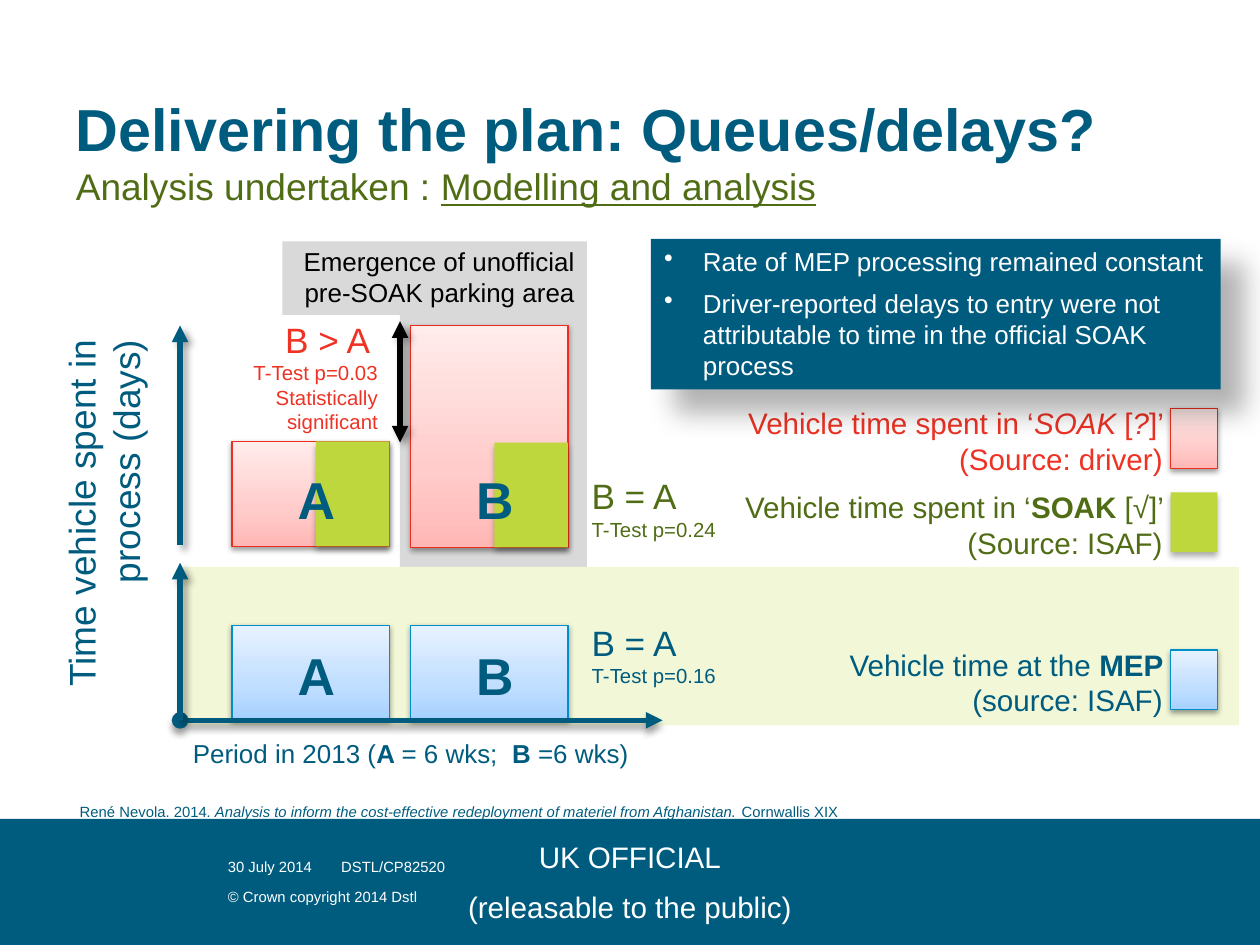
from copy import deepcopy

from lxml.etree import SubElement
from pptx import Presentation
from pptx.dml.color import RGBColor
from pptx.enum.shapes import MSO_CONNECTOR, MSO_SHAPE
from pptx.enum.text import MSO_ANCHOR, MSO_AUTO_SIZE, PP_ALIGN
from pptx.oxml.ns import qn
from pptx.util import Cm, Pt

TEAL = RGBColor(0x00, 0x5C, 0x7E)
RED = RGBColor(0xEE, 0x32, 0x24)
RED_EDGE = RGBColor(0xEE, 0x2D, 0x1E)
BLUE_EDGE = RGBColor(0x00, 0x8F, 0xCA)
OLIVE = RGBColor(0x50, 0x6D, 0x15)
LIME = RGBColor(0xBD, 0xD7, 0x3D)
PALE = RGBColor(0xF2, 0xF7, 0xD8)
GREY = RGBColor(0xD9, 0xD9, 0xD9)
BLACK = RGBColor(0, 0, 0)
WHITE = RGBColor(0xFF, 0xFF, 0xFF)
PINKS = [RGBColor.from_string(c) for c in ("FFB7B5", "FFCCCB", "FFECEB")]
BLUES = [RGBColor.from_string(c) for c in ("A6D1FF", "C0DEFF", "E7F2FF")]

# Shadows: opacity %, blur pt, distance pt, direction in degrees
BAR_SHADOW = (38, 3.1, 1.6, 90)
LIME_SHADOW = (32, 3.5, 2.2, 90)
BOX_SHADOW = (30, 15, 18, 45)
# Box styles: fill, edge, shadow
DRIVER = (PINKS, RED_EDGE, BAR_SHADOW)
SOAK = (LIME, None, LIME_SHADOW)
MEP = (BLUES, BLUE_EDGE, BAR_SHADOW)

LEFT, CENTER, RIGHT = PP_ALIGN.LEFT, PP_ALIGN.CENTER, PP_ALIGN.RIGHT


class Board:
    font = "Arial"

    def __init__(self, prs):
        self.s = prs.slides.add_slide(prs.slide_layouts[5])

    def effects(self, sp, shadow):
        lst = SubElement(sp._element.spPr, qn("a:effectLst"))
        if shadow:
            alpha, blur, dist, angle = shadow
            outer = SubElement(lst, qn("a:outerShdw"), blurRad=str(Pt(blur)),
                               dist=str(Pt(dist)), dir=str(angle * 60000),
                               algn="tl", rotWithShape="0")
            clr = SubElement(outer, qn("a:srgbClr"), val="000000")
            SubElement(clr, qn("a:alpha"), val=str(alpha * 1000))

    def gradient(self, fill, sp, colors):
        fill.gradient()
        fill.gradient_angle = 90
        first = sp._element.spPr.find(".//" + qn("a:gs"))
        first.addnext(deepcopy(first))
        for stop, color, pos in zip(fill.gradient_stops, colors, (0, 0.35, 1)):
            stop.color.rgb, stop.position = color, pos

    def box(self, x, y, w, h, fill, edge=None, shadow=None):
        sp = self.s.shapes.add_shape(MSO_SHAPE.RECTANGLE, Cm(x), Cm(y), Cm(w), Cm(h))
        if isinstance(fill, list):
            self.gradient(sp.fill, sp, fill)
        else:
            sp.fill.solid()
            sp.fill.fore_color.rgb = fill
        if edge is None:
            sp.line.fill.background()
        else:
            sp.line.color.rgb, sp.line.width = edge, Pt(0.75)
        self.effects(sp, shadow)
        return sp

    def arrow(self, x1, y1, x2, y2, color=TEAL, head=None, angle=45):
        cn = self.s.shapes.add_connector(MSO_CONNECTOR.STRAIGHT,
                                         Cm(x1), Cm(y1), Cm(x2), Cm(y2))
        cn.line.color.rgb, cn.line.width = color, Pt(3)
        ln = cn._element.spPr.find(qn("a:ln"))
        if head:
            SubElement(ln, qn("a:headEnd"), type=head)
        SubElement(ln, qn("a:tailEnd"), type="triangle")
        self.effects(cn, (40, 4, 3, angle))

    def fill_text(self, sp, *paras, size, color, align=LEFT, anchor=MSO_ANCHOR.TOP,
                  wrap=True, spacing=None, before=0, bullet=False):
        """Each paragraph is a list of runs: text, or (text, marks, size, color)."""
        tf = sp.text_frame
        tf.auto_size, tf.word_wrap = MSO_AUTO_SIZE.NONE, wrap
        tf.vertical_anchor = anchor
        for i, runs in enumerate(paras):
            p = tf.add_paragraph() if i else tf.paragraphs[0]
            p.alignment = align
            p.space_before = Pt(before if i else 0)
            if spacing:
                p.line_spacing = spacing
            if bullet:
                pPr = p._p.get_or_add_pPr()
                pPr.set("marL", str(Cm(0.74)))
                pPr.set("indent", str(-Cm(0.74)))
                SubElement(pPr, qn("a:buChar"), char="•")
            for run in runs:
                if run == "\n":
                    p.add_line_break()
                    continue
                run = (run,) if isinstance(run, str) else run
                text, marks, pts, rgb = run + ("", size, color)[len(run) - 1:]
                r = p.add_run()
                r.text = text
                r.font.name, r.font.size, r.font.color.rgb = self.font, Pt(pts), rgb
                r.font.bold, r.font.italic = "b" in marks, "i" in marks
                r.font.underline = "u" in marks
        return sp

    def text(self, x, y, w, h, *paras, **fmt):
        tb = self.s.shapes.add_textbox(Cm(x), Cm(y), Cm(w), Cm(h))
        return self.fill_text(tb, *paras, **fmt)

    def title(self, x, y, w, h, *paras, **fmt):
        sp = self.s.shapes.title
        sp.left, sp.top, sp.width, sp.height = Cm(x), Cm(y), Cm(w), Cm(h)
        return self.fill_text(sp, *paras, **fmt)


def main():
    prs = Presentation()
    prs.slide_width, prs.slide_height = Cm(24), Cm(18)
    b = Board(prs)

    b.title(1.19, 1.63, 22.05, 2.2,
            [("Delivering the plan: Queues/delays?", "b"), "\n",
             ("Analysis undertaken : ", "", 20, OLIVE),
             ("Modelling and analysis", "u", 20, OLIVE)], size=32, color=TEAL)

    # Footer
    b.box(0, 15.6, 24, 2.4, TEAL)
    for x, y, line in ((4.09, 16.21, "30 July 2014"), (6.25, 16.21, "DSTL/CP82520"),
                       (4.09, 16.79, "© Crown copyright 2014 Dstl")):
        b.text(x, y, 4.6, 0.7, [line], size=8, color=WHITE, wrap=False)
    b.text(0, 15.6, 24, 2.4, ["UK OFFICIAL"], ["(releasable to the public)"], size=16,
           color=WHITE, align=CENTER, anchor=MSO_ANCHOR.MIDDLE, before=8)
    b.text(1.27, 14.5, 15.14, 1.3,
           ["René Nevola. 2014",
            (". Analysis to inform the cost-effective redeployment of materiel"
             " from Afghanistan. ", "i"), "Cornwallis XIX"],
           size=8, color=TEAL, wrap=False, spacing=Pt(28.5))

    # Background areas
    b.box(5.38, 4.6, 2.24, 1.4, GREY)
    b.box(7.62, 4.6, 3.56, 9.2, GREY)
    b.text(5.41, 4.55, 5.79, 1.45, ["Emergence of unofficial pre-SOAK parking area"],
           size=14, color=BLACK, align=RIGHT)
    b.box(3.43, 10.8, 20.17, 3.02, PALE)

    # Bars for periods A and B
    for i, (period, top, height) in enumerate((("A", 8.41, 2), ("B", 6.2, 4.23))):
        x = 4.42 + 3.4 * i
        b.box(x, top, 3, height, *DRIVER)
        b.box(x + 1.6, top + height - 2, 1.4, 2, *SOAK)
        b.box(x, 11.91, 3, 1.8, *MEP)
        for y in (8.97, 12.32):
            b.text(x + 0.61, y, 1.6, 1.3, [(period, "b")], size=28, color=TEAL,
                   align=RIGHT, spacing=Pt(28.5))

    # Axes
    b.arrow(3.43, 13.72, 12.62, 13.72, head="oval", angle=90)
    b.arrow(3.43, 13.72, 3.43, 10.72)
    b.arrow(3.43, 10.39, 3.43, 6.2)
    b.arrow(7.62, 8.43, 7.62, 6.12, color=BLACK, head="triangle")
    axis = b.text(0.99, 6.22, 2.24, 7.37, ["Time vehicle spent in process (days)"],
                  size=20, color=TEAL, align=RIGHT)
    axis.text_frame._txBody.bodyPr.set("vert", "vert270")
    b.text(2.29, 13.51, 9.93, 1.3,
           ["Period in 2013 (", ("A ", "b"), "= 6 wks;  ", ("B ", "b"), "=6 wks)"],
           size=14, color=TEAL, align=RIGHT, spacing=Pt(28.5))

    # Test results
    b.text(3.84, 5.94, 3.61, 2.46, [("B > A ", "", 19)], ["T-Test p=0.03"],
           ["Statistically significant"], size=11, color=RED, align=RIGHT)
    for y, value, color in ((8.92, "0.24", OLIVE), (11.71, "0.16", TEAL)):
        b.text(11.02, y, 3.63, 1.52, [("B = A", "", 19)], ["T-Test p=" + value],
               size=11, color=color)

    # Legend
    for y, width, style, color, runs in (
            (7.59, 8.61, DRIVER, RED, ["Vehicle time spent in ‘", ("SOAK", "i"), " [",
                                       ("?", "i"), "]’ (Source: driver)"]),
            (9.19, 8.61, SOAK, OLIVE, ["Vehicle time spent in ‘", ("SOAK", "b"),
                                       " [√]’ (Source: ISAF)"]),
            (12.19, 7.59, MEP, TEAL, ["Vehicle time at the", (" MEP ", "b"),
                                      "(source: ISAF)"])):
        b.text(22.4 - width, y, width, 1.62, runs, size=16, color=color, align=RIGHT)
        b.box(22.3, y + 0.19, 0.89, 1.14, *style)

    # Findings
    findings = b.box(12.4, 4.55, 10.85, 2.87, TEAL, shadow=BOX_SHADOW)
    b.fill_text(findings, ["Rate of MEP processing remained constant"],
                ["Driver-reported delays to entry were not attributable to time"
                 " in the official SOAK process"],
                size=14, color=WHITE, before=6, bullet=True)

    prs.save("out.pptx")


if __name__ == "__main__":
    main()
